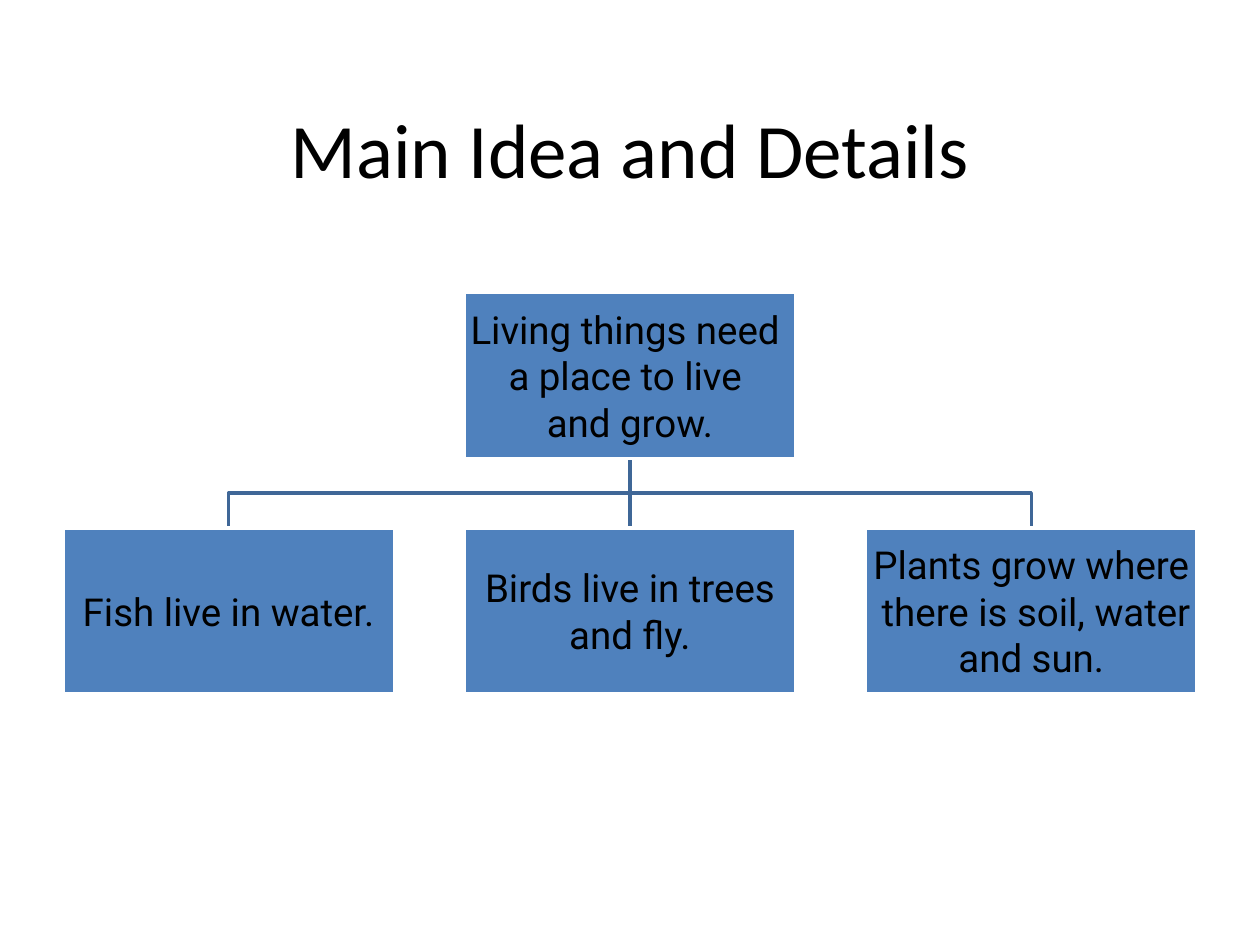
import pptx
import pptx.util
import pptx.dml.color
import pptx.enum.shapes
import pptx.enum.text
import lxml.etree
from pptx.util import Cm, Pt

TITLE = "Main Idea and Details"
MAIN_IDEA = ["Living things need ", "a place to live ", "and grow."]
DETAILS = [
    ["Fish live in water."],
    ["Birds live in trees", "and fly."],
    ["Plants grow where", " there is soil, water ", "and sun."],
]

BLACK, WHITE, BLUE, DARK_BLUE = "000000", "FFFFFF", "4F81BD", "3F6797"
CENTER = 12.7
BOX_WIDTH, BOX_HEIGHT = 6.68, 3.34
COLUMN_STEP = 8.09
MAIN_TOP, DETAIL_TOP = 5.9, 10.64
MAIN_BOTTOM = MAIN_TOP + BOX_HEIGHT
BRANCH_Y = (MAIN_BOTTOM + DETAIL_TOP) / 2


def color(code):
    return pptx.dml.color.RGBColor.from_string(code)


def set_line(shape, code):
    shape.line.color.rgb = color(code)
    shape.line.width = Pt(2)


def write(shape, lines, font, size, inset):
    frame = shape.text_frame
    frame.word_wrap = True
    frame.vertical_anchor = pptx.enum.text.MSO_ANCHOR.MIDDLE
    frame.margin_left = frame.margin_right = Cm(inset)
    frame.margin_top = frame.margin_bottom = Cm(inset)
    for index, line in enumerate(lines):
        para = frame.add_paragraph() if index else frame.paragraphs[0]
        para.alignment = pptx.enum.text.PP_ALIGN.CENTER
        span = para.add_run()
        span.text = line
        span.font.name = font
        span.font.size = Pt(size)
        span.font.color.rgb = color(BLACK)


def add_box(page, center, top, lines):
    box = page.shapes.add_shape(
        pptx.enum.shapes.MSO_SHAPE.RECTANGLE,
        Cm(center - BOX_WIDTH / 2), Cm(top), Cm(BOX_WIDTH), Cm(BOX_HEIGHT))
    box.shadow.inherit = False
    box.fill.solid()
    box.fill.fore_color.rgb = color(BLUE)
    set_line(box, WHITE)
    write(box, lines, "Roboto", 22, 0.05)


def add_straight_branch(page):
    branch = page.shapes.add_connector(
        pptx.enum.shapes.MSO_CONNECTOR.STRAIGHT,
        Cm(CENTER), Cm(MAIN_BOTTOM), Cm(CENTER), Cm(DETAIL_TOP))
    set_line(branch, DARK_BLUE)
    lxml.etree.SubElement(branch.element.spPr, pptx.oxml.ns.qn("a:effectLst"))


def add_bent_branch(page, center):
    builder = page.shapes.build_freeform(Cm(CENTER), Cm(MAIN_BOTTOM))
    corners = [(CENTER, BRANCH_Y), (center, BRANCH_Y), (center, DETAIL_TOP)]
    builder.add_line_segments([(Cm(x), Cm(y)) for x, y in corners], close=False)
    branch = builder.convert_to_shape()
    branch.shadow.inherit = False
    branch.fill.background()
    set_line(branch, DARK_BLUE)


def main():
    deck = pptx.Presentation()
    deck.slide_width, deck.slide_height = Cm(25.4), Cm(19.05)
    page = deck.slides.add_slide(deck.slide_layouts[6])

    title = page.shapes.add_textbox(Cm(1.27), Cm(1.07), Cm(22.86), Cm(3.81))
    write(title, [TITLE], "Calibri", 44, 0.25)

    centers = [CENTER + (index - 1) * COLUMN_STEP for index in range(len(DETAILS))]
    for center in centers:
        if center == CENTER:
            add_straight_branch(page)
        else:
            add_bent_branch(page, center)

    add_box(page, CENTER, MAIN_TOP, MAIN_IDEA)
    for center, lines in zip(centers, DETAILS):
        add_box(page, center, DETAIL_TOP, lines)

    deck.save("out.pptx")


if __name__ == "__main__":
    main()
